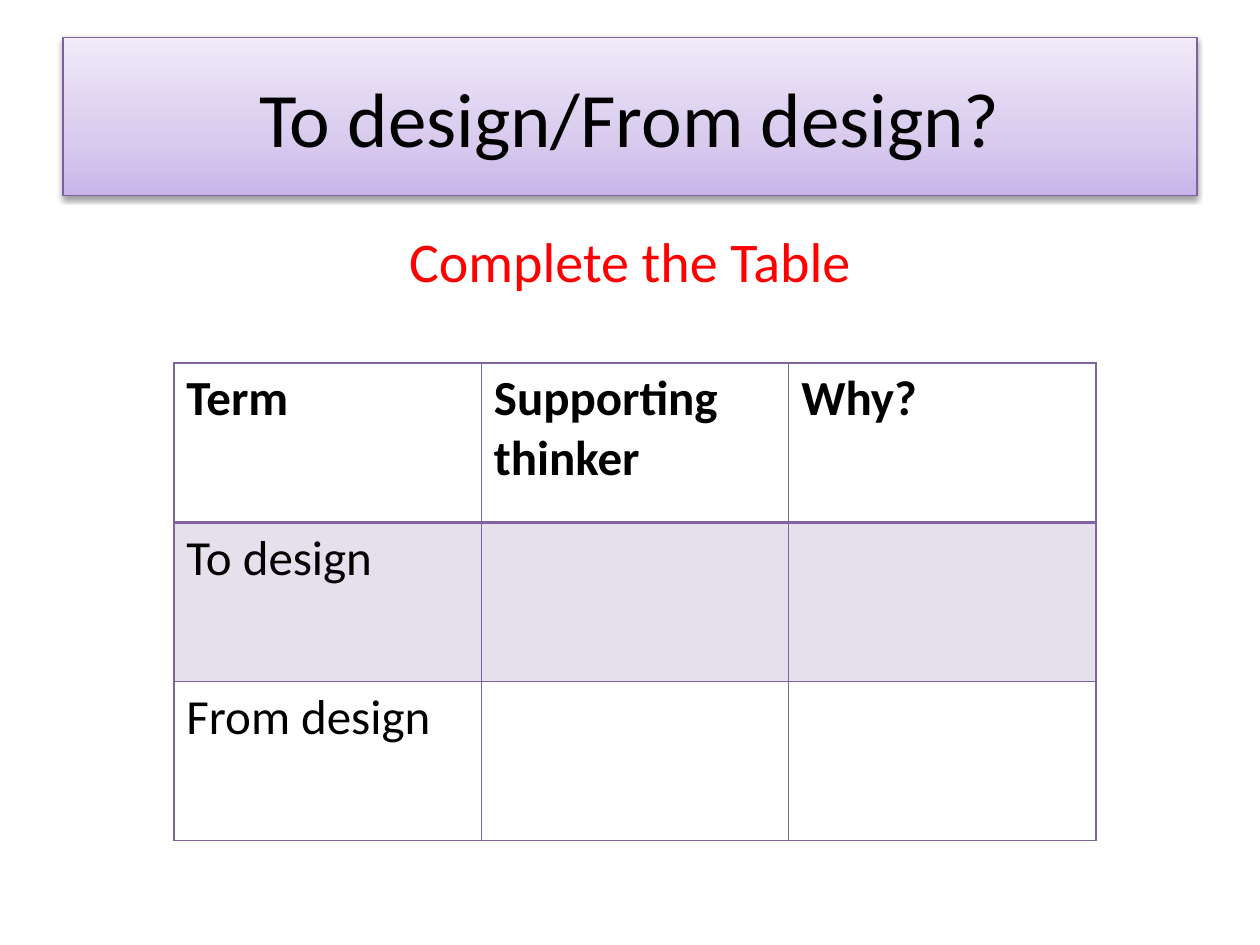
from dataclasses import dataclass

from lxml.etree import SubElement
from pptx import Presentation
from pptx.dml.color import RGBColor
from pptx.enum.shapes import MSO_SHAPE
from pptx.enum.text import MSO_ANCHOR, PP_ALIGN
from pptx.oxml.ns import qn
from pptx.util import Inches, Pt


@dataclass(frozen=True)
class Theme:
    font: str = "Calibri"
    text: str = "000000"
    accent: str = "FF0000"
    border: str = "8064A2"
    title_line: str = "7D60A0"
    title_gradient: tuple = ((0, "C9B5E8"), (35, "D8CBEE"), (100, "F0EAF9"))
    band_opacity: int = 20
    title_size: int = 44
    subtitle_size: int = 32
    table_size: int = 28


@dataclass(frozen=True)
class Row:
    cells: tuple
    height: float
    bold: bool = False
    banded: bool = False
    top_width: float = 1
    bottom_width: float = 1


THEME = Theme()
COLUMN_WIDTH = 2.44
ROWS = (
    Row(("Term", "Supporting thinker", "Why?"), 1.27, bold=True, bottom_width=2),
    Row(("To design", "", ""), 1.26, banded=True, top_width=2),
    Row(("From design", "", ""), 1.26),
)


def write_text(frame, text: str, *, size: int, color: str = THEME.text,
               bold: bool = False, align=PP_ALIGN.LEFT, anchor=MSO_ANCHOR.TOP) -> None:
    frame.word_wrap = True
    frame.vertical_anchor = anchor
    paragraph = frame.paragraphs[0]
    paragraph.alignment = align
    run = paragraph.add_run()
    run.text = text
    run.font.name = THEME.font
    run.font.size = Pt(size)
    run.font.bold = bold
    run.font.color.rgb = RGBColor.from_string(color)


def add_color(parent, color: str, opacity: int = 100) -> None:
    element = SubElement(parent, qn("a:srgbClr"), val=color)
    if opacity < 100:
        SubElement(element, qn("a:alpha"), val=str(opacity * 1000))


def add_title(slide, text: str) -> None:
    shape = slide.shapes.add_shape(
        MSO_SHAPE.RECTANGLE, Inches(0.5), Inches(0.3), Inches(9), Inches(1.25))
    shape.fill.gradient()
    shape.fill.gradient_angle = 90
    properties = shape.element.spPr
    stops = properties.find(qn("a:gradFill")).find(qn("a:gsLst"))
    for stop in list(stops):
        stops.remove(stop)
    for position, color in THEME.title_gradient:
        add_color(SubElement(stops, qn("a:gs"), pos=str(position * 1000)), color)
    shape.line.color.rgb = RGBColor.from_string(THEME.title_line)
    shape.line.width = Pt(0.75)
    shape.shadow.inherit = False
    shadow = SubElement(
        properties.find(qn("a:effectLst")), qn("a:outerShdw"),
        blurRad=str(Pt(3.1)), dist=str(Pt(1.6)), dir="5400000", rotWithShape="0")
    add_color(shadow, "000000", 38)
    write_text(shape.text_frame, text, size=THEME.title_size,
               align=PP_ALIGN.CENTER, anchor=MSO_ANCHOR.MIDDLE)


def add_subtitle(slide, text: str) -> None:
    box = slide.shapes.add_textbox(Inches(0.5), Inches(1.75), Inches(9), Inches(0.75))
    write_text(box.text_frame, text, size=THEME.subtitle_size,
               color=THEME.accent, align=PP_ALIGN.CENTER)
    box.text_frame.paragraphs[0].space_before = Pt(0.2 * THEME.subtitle_size)


def format_cell(cell, row: Row) -> None:
    properties = cell._tc.get_or_add_tcPr()
    widths = {"L": 1, "R": 1, "T": row.top_width, "B": row.bottom_width}
    for side, width in widths.items():
        line = SubElement(properties, qn(f"a:ln{side}"), w=str(Pt(width)))
        add_color(SubElement(line, qn("a:solidFill")), THEME.border)
    if row.banded:
        add_color(SubElement(properties, qn("a:solidFill")),
                  THEME.border, THEME.band_opacity)
    else:
        cell.fill.background()


def add_design_table(slide, rows: tuple) -> None:
    column_count = len(rows[0].cells)
    table = slide.shapes.add_table(
        len(rows), column_count, Inches(1.38), Inches(2.88),
        Inches(COLUMN_WIDTH * column_count),
        Inches(sum(row.height for row in rows))).table
    table.first_row = False
    table.horz_banding = False
    for column in table.columns:
        column.width = Inches(COLUMN_WIDTH)
    for row_index, row in enumerate(rows):
        table.rows[row_index].height = Inches(row.height)
        for column_index, text in enumerate(row.cells):
            cell = table.cell(row_index, column_index)
            format_cell(cell, row)
            if text:
                write_text(cell.text_frame, text, size=THEME.table_size, bold=row.bold)


def main() -> None:
    presentation = Presentation()
    presentation.slide_width = Inches(10)
    presentation.slide_height = Inches(7.5)
    slide = presentation.slides.add_slide(presentation.slide_layouts[6])
    add_title(slide, "To design/From design?")
    add_subtitle(slide, "Complete the Table")
    add_design_table(slide, ROWS)
    presentation.save("out.pptx")


if __name__ == "__main__":
    main()
